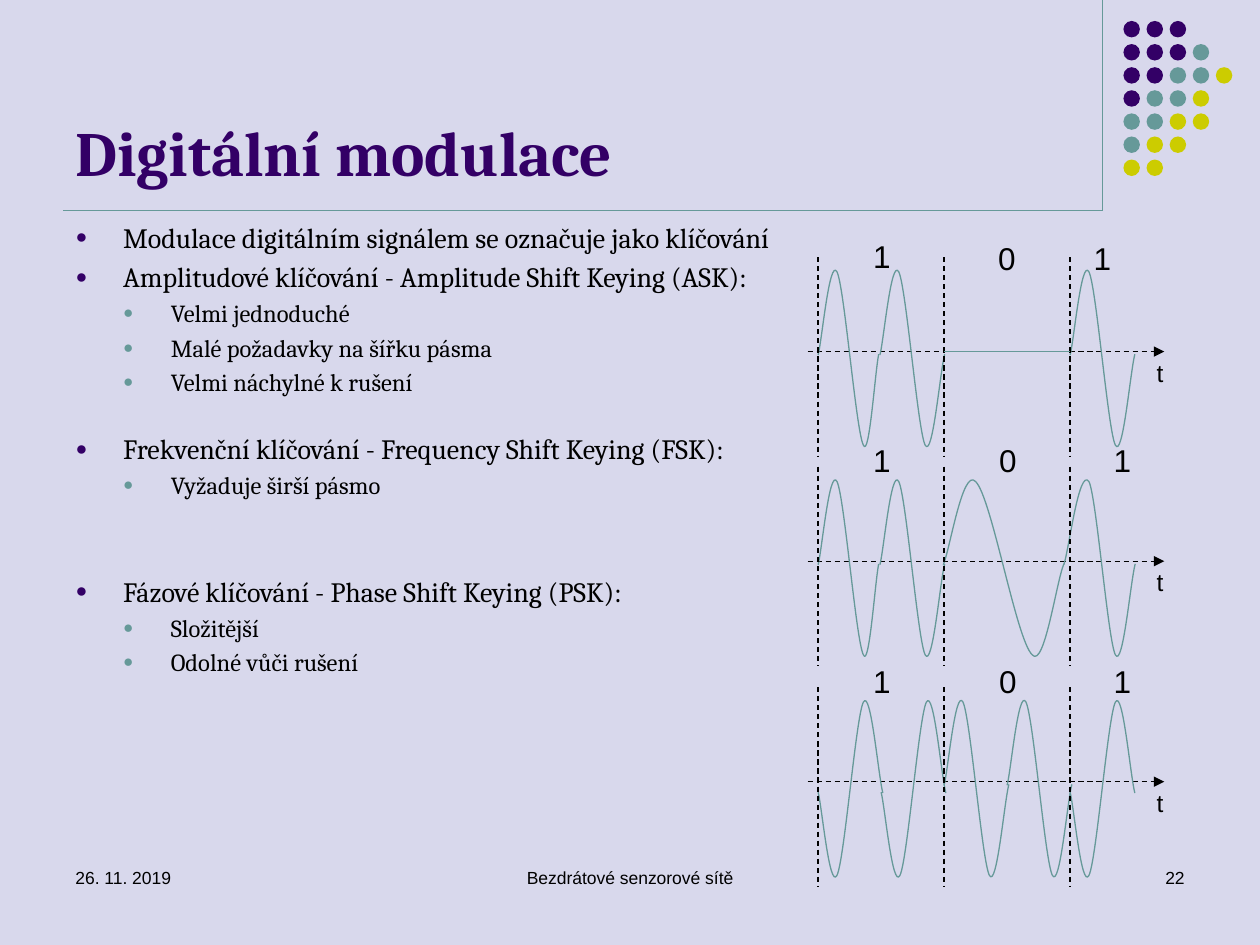
"""Build the slide on digital modulation with ASK, FSK and PSK waveforms."""

from dataclasses import dataclass

from lxml.etree import SubElement
from pptx import Presentation
from pptx.dml.color import RGBColor
from pptx.enum.dml import MSO_LINE
from pptx.enum.shapes import MSO_CONNECTOR, MSO_SHAPE
from pptx.enum.text import MSO_ANCHOR, MSO_AUTO_SIZE, PP_ALIGN
from pptx.oxml.ns import qn
from pptx.slide import Slide
from pptx.util import Pt

COLORS = {
    "background": "D8D8EC",
    "purple": "330066",
    "teal": "669999",
    "yellow": "CCCC00",
    "black": "000000",
}
DOT_COLORS = {"P": "purple", "T": "teal", "Y": "yellow", "B": "background"}
DOT_ROWS = ("PPP", "PPPT", "PPTTY", "PTTY", "TTYYB", "TYYB", "YYBB", "-B-B")
BIT_START, BIT_WIDTH = 467.5, 72


@dataclass(frozen=True)
class Point:
    text: str
    level: int = 0
    gap: float = 3.2


@dataclass(frozen=True)
class Pulse:
    start: float
    peak: float
    trough: float
    end: float
    inverted: bool = False


@dataclass(frozen=True)
class Keying:
    axis: float
    labels: tuple[tuple[str, float, float], ...]
    pulses: tuple[Pulse, ...]


def cycle(start: float, length: float = 37, inverted: bool = False) -> Pulse:
    return Pulse(start, start + 10.8, start + 25.9, start + length, inverted)


def detail(text: str) -> Point:
    return Point(text, 1, 2.8)


POINTS = (
    Point("Modulace digitálním signálem se označuje jako klíčování"),
    Point("Amplitudové klíčování - Amplitude Shift Keying (ASK):"),
    detail("Velmi jednoduché"),
    detail("Malé požadavky na šířku pásma"),
    detail("Velmi náchylné k rušení"),
    Point("Frekvenční klíčování - Frequency Shift Keying (FSK):", gap=20.2),
    detail("Vyžaduje širší pásmo"),
    Point("Fázové klíčování - Phase Shift Keying (PSK):", gap=42.8),
    detail("Složitější"),
    detail("Odolné vůči rušení"),
)
BIT_LABELS = (("1", 491.8, 72), ("0", 563.8, 72), ("1", 629.3, 72))
DOUBLE_CYCLE = (cycle(0, 34.6), cycle(35.3))
KEYINGS = (
    Keying(
        200.9,
        (("1", 491.8, 69), ("0", 563.3, 68), ("1", 617.8, 68)),
        DOUBLE_CYCLE + (cycle(144),),
    ),
    Keying(
        320.7,
        BIT_LABELS,
        DOUBLE_CYCLE + (Pulse(71.5, 90, 122.4, 140.4), Pulse(140.4, 154.8, 169.9, 181.2)),
    ),
    Keying(
        446.7,
        BIT_LABELS,
        tuple(cycle(36 * i, inverted=i not in (2, 3)) for i in range(5)),
    ),
)


def color(name: str) -> RGBColor:
    return RGBColor.from_string(COLORS[name])


def add_line(slide: Slide, start: tuple[float, float], end: tuple[float, float],
             tint: str = "teal", dashed: bool = False, arrow: bool = False) -> None:
    connector = slide.shapes.add_connector(
        MSO_CONNECTOR.STRAIGHT, *(Pt(value) for value in (*start, *end)))
    connector.line.color.rgb = color(tint)
    connector.line.width = Pt(0.75)
    if dashed:
        connector.line.dash_style = MSO_LINE.DASH
    properties = connector._element.spPr
    if arrow:
        SubElement(properties.find(qn("a:ln")), qn("a:tailEnd"), type="triangle")
    SubElement(properties, qn("a:effectLst"))


def add_text(slide: Slide, text: str, box: tuple[float, float, float, float],
             size: float, align: PP_ALIGN = PP_ALIGN.LEFT, wrap: bool = False) -> None:
    frame = slide.shapes.add_textbox(*(Pt(value) for value in box)).text_frame
    frame.text = text
    frame.word_wrap = wrap
    paragraph = frame.paragraphs[0]
    paragraph.alignment = align
    font = paragraph.runs[0].font
    font.name, font.size = "Arial", Pt(size)
    font.color.rgb = color("black")


def add_decoration(slide: Slide) -> None:
    add_line(slide, (630, 0), (630, 120.2))
    add_line(slide, (36, 120.2), (630, 120.2))
    for row, dots in enumerate(DOT_ROWS):
        for column, key in enumerate(dots):
            if key not in DOT_COLORS:
                continue
            dot = slide.shapes.add_shape(
                MSO_SHAPE.OVAL, Pt(642 + 13.2 * column), Pt(12 + 13.2 * row), Pt(9.4), Pt(9.4))
            dot.shadow.inherit = False
            dot.fill.solid()
            dot.fill.fore_color.rgb = color(DOT_COLORS[key])
            dot.line.fill.background()


def fill_title(slide: Slide) -> None:
    title = slide.shapes.title
    title.left, title.top, title.width, title.height = Pt(36), Pt(9.4), Pt(594), Pt(102)
    frame = title.text_frame
    frame.text = "Digitální modulace"
    frame.auto_size = MSO_AUTO_SIZE.NONE
    frame.vertical_anchor = MSO_ANCHOR.BOTTOM
    heading = frame.paragraphs[0]
    heading.alignment = PP_ALIGN.LEFT
    font = heading.runs[0].font
    font.name, font.size, font.bold = "Cambria", Pt(36), True
    font.color.rgb = color("purple")


def fill_body(slide: Slide) -> None:
    body = slide.placeholders[1]
    body.left, body.top, body.width, body.height = Pt(36), Pt(122.4), Pt(422), Pt(347)
    frame = body.text_frame
    frame.text = "\n".join(point.text for point in POINTS)
    frame.auto_size = MSO_AUTO_SIZE.NONE
    for point, paragraph in zip(POINTS, frame.paragraphs):
        paragraph.level = point.level
        paragraph.space_before = Pt(point.gap)
        properties = paragraph._p.get_or_add_pPr()
        properties.set("marL", str(Pt(27.2 * (point.level + 1))))
        properties.set("indent", str(-Pt(27.2)))
        bullet_color = SubElement(properties, qn("a:buClr"))
        SubElement(bullet_color, qn("a:srgbClr"), val=COLORS[("purple", "teal")[point.level]])
        SubElement(properties, qn("a:buSzPct"), val="70000")
        SubElement(properties, qn("a:buFont"), typeface="Arial")
        SubElement(properties, qn("a:buChar"), char="●")
        font = paragraph.runs[0].font
        font.name, font.size = "Cambria", Pt(16 - 2 * point.level)
        font.color.rgb = color("black")


def add_pulse(slide: Slide, pulse: Pulse, axis: float) -> None:
    knots = (pulse.start, pulse.peak, pulse.trough, pulse.end)
    shares = ((0.2, 0.6, 1), (0.28, 0.72, 1), (0.38, 0.76, 1))
    across = [pulse.start] + [
        start + share * (end - start)
        for start, end, steps in zip(knots, knots[1:], shares) for share in steps]
    heights = (-2, -10, -58, -49.5, -41, 41.5, 49.5, 57.5, 8, -2.5)
    sign = -1 if pulse.inverted else 1
    controls = [(Pt(BIT_START + x), Pt(axis + 4 + sign * y)) for x, y in zip(across, heights)]
    builder = slide.shapes.build_freeform(*controls[0])
    builder.add_line_segments(controls[1:], close=False)
    wave = builder.convert_to_shape()
    outline = wave._element.spPr.find(".//" + qn("a:path"))
    corners = outline.findall(qn("a:lnTo"))
    for first in range(0, len(corners), 3):
        bend = SubElement(outline, qn("a:cubicBezTo"))
        for corner in corners[first:first + 3]:
            bend.append(corner[0])
            outline.remove(corner)
    wave.shadow.inherit = False
    wave.fill.background()
    wave.line.color.rgb = color("teal")
    wave.line.width = Pt(0.75)


def add_keying(slide: Slide, keying: Keying) -> None:
    axis = keying.axis
    add_line(slide, (461.5, axis), (665.3, axis), "black", dashed=True, arrow=True)
    for pulse in keying.pulses:
        add_pulse(slide, pulse, axis)
    for bit, (label, left, rise) in enumerate(keying.labels):
        edge = BIT_START + BIT_WIDTH * bit
        add_line(slide, (edge, axis - 54), (edge, axis + 60), "black", dashed=True)
        add_text(slide, label, (left, axis - rise, 23, 26.6), 18)
    add_text(slide, "t", (653.8, axis, 18.7, 23.8), 14)


def main() -> None:
    deck = Presentation()
    deck.slide_width, deck.slide_height = Pt(720), Pt(540)
    slide = deck.slides.add_slide(deck.slide_layouts[1])
    slide.background.fill.solid()
    slide.background.fill.fore_color.rgb = color("background")
    add_decoration(slide)
    fill_title(slide)
    fill_body(slide)
    flat, zero_bit = KEYINGS[0].axis, BIT_START + BIT_WIDTH
    for keying in KEYINGS:
        add_keying(slide, keying)
    add_line(slide, (zero_bit, flat), (zero_bit + BIT_WIDTH, flat))
    add_text(slide, "26. 11. 2019", (36, 492, 168, 36), 10, wrap=True)
    add_text(slide, "Bezdrátové senzorové sítě", (246, 492, 228, 36), 10, PP_ALIGN.CENTER, True)
    add_text(slide, "22", (516, 492, 168, 36), 10, PP_ALIGN.RIGHT, True)
    deck.save("out.pptx")


if __name__ == "__main__":
    main()
